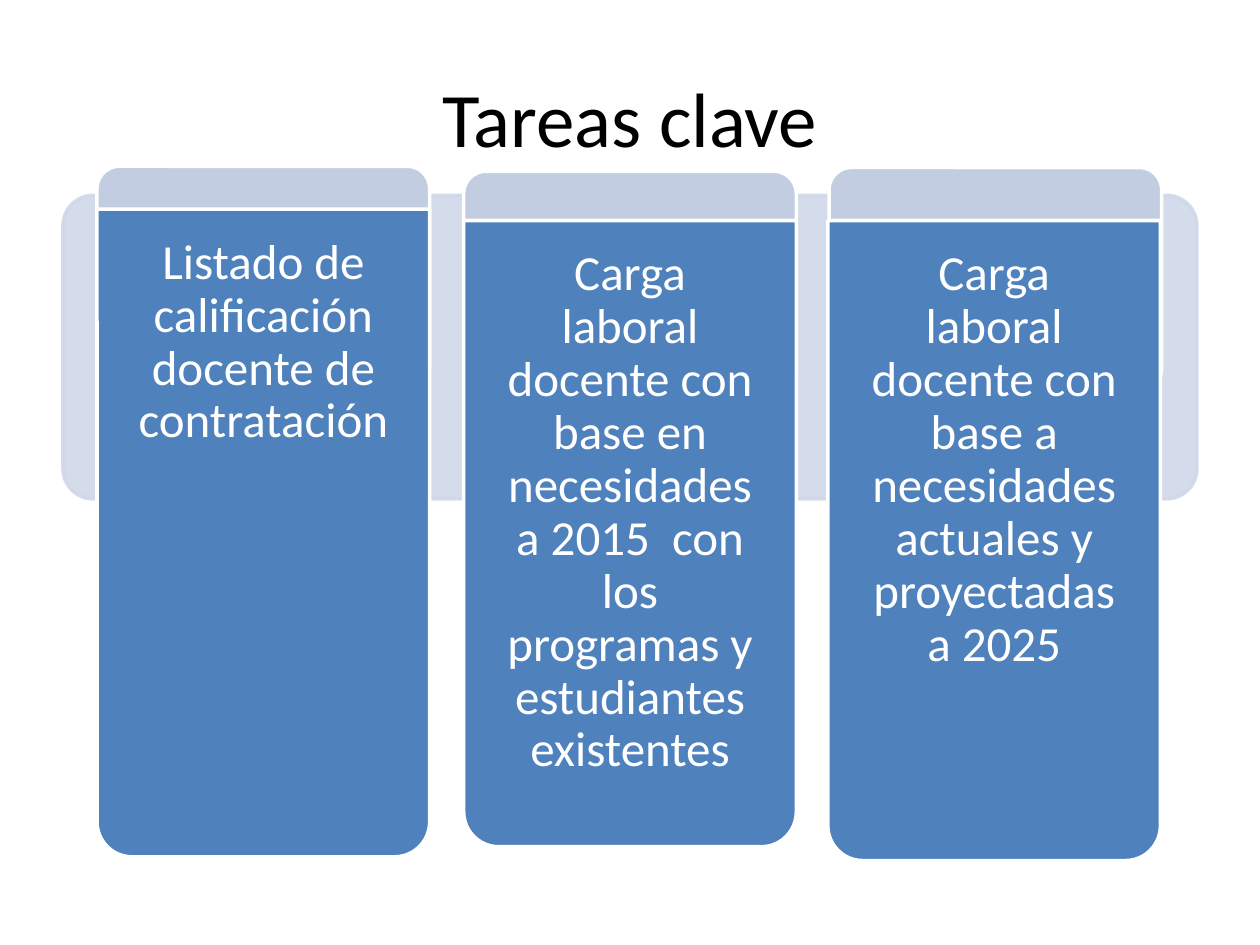
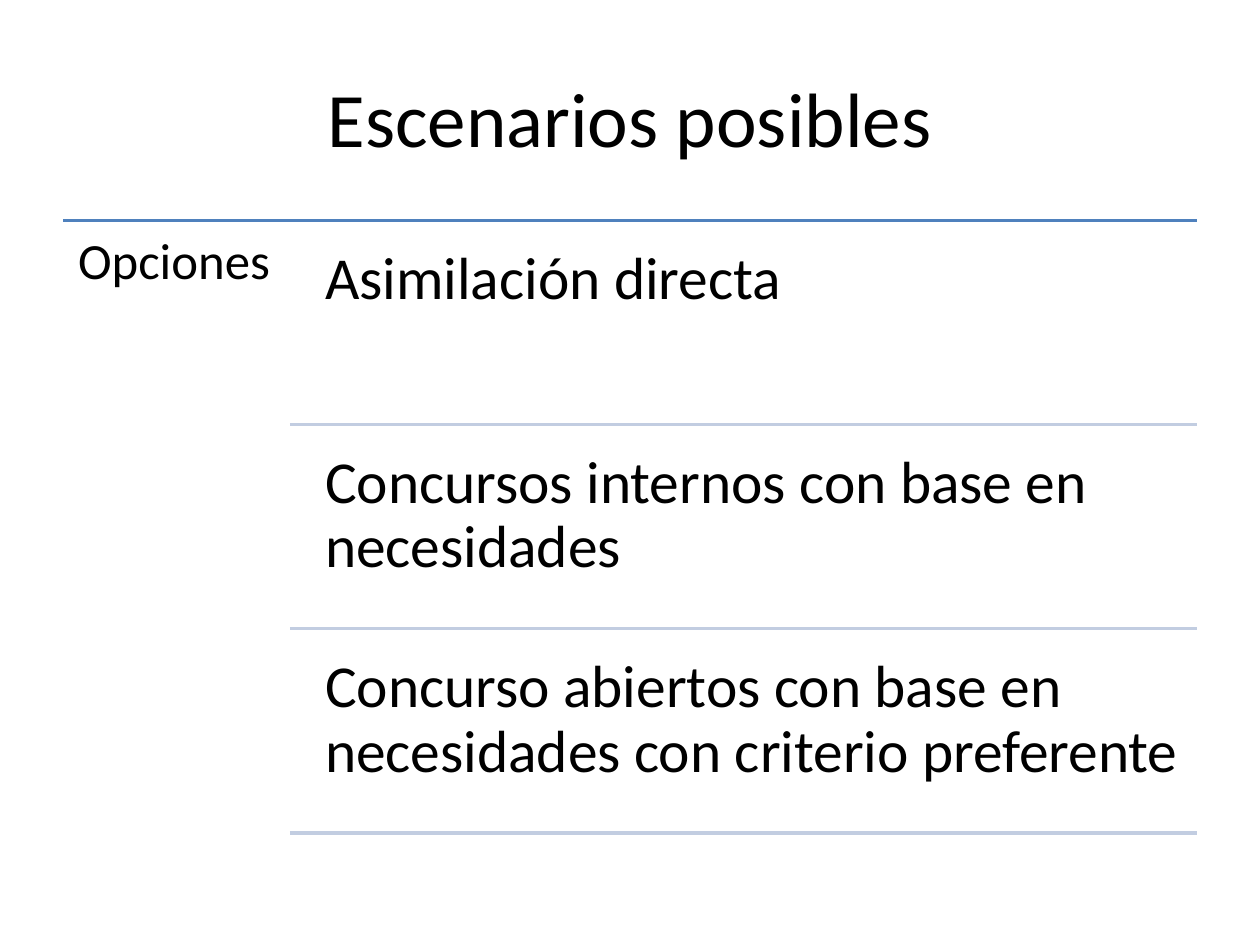
from typing import NamedTuple

from lxml import etree
from pptx import Presentation
from pptx.dml.color import RGBColor
from pptx.enum import shapes, text
from pptx.oxml.ns import qn
from pptx.util import Inches, Pt

FONT = "Calibri"
BLACK, WHITE = "000000", "FFFFFF"
BLUE, PALE_BLUE, BAND_BLUE = "4F81BD", "C2CDE1", "D0D8E8"
LINE_WIDTH = Pt(2)
LEFT, RIGHT = 0.5, 9.5
TITLE_ONLY = 5


class Box(NamedTuple):
    left: float
    top: float
    width: float
    height: float

    def lengths(self) -> list:
        return [Inches(value) for value in self]


class TaskCard(NamedTuple):
    left: float
    tab_left: float
    tab_top: float
    top: float
    height: float
    task: str


TASK_CARDS = [
    TaskCard(0.77, 0.77, 1.32, 1.66, 5.14,
             "Listado de calificación docente de contratación"),
    TaskCard(3.68, 3.68, 1.36, 1.75, 4.97,
             "Carga laboral docente con base en necesidades a 2015  con los "
             "programas y estudiantes existentes"),
    TaskCard(6.57, 6.58, 1.33, 1.75, 5.08,
             "Carga laboral docente con base a necesidades actuales y "
             "proyectadas a 2025"),
]
CARD_WIDTH, TAB_HEIGHT, CARD_INSET = 2.64, 1.77, 0.08

SCENARIOS = [
    "Asimilación directa",
    "Concursos internos con base en necesidades",
    "Concurso abiertos con base en necesidades con criterio preferente",
]
SCENARIO_TOP, SCENARIO_HEIGHT, SCENARIO_GAP = 1.75, 1.55, 0.08
SCENARIO_PITCH = 1.62
OPTIONS_WIDTH = 1.8


def rgb(color: str) -> RGBColor:
    return RGBColor.from_string(color)


def style_paragraph(paragraph, size: float, color: str, alignment) -> None:
    paragraph.alignment = alignment
    paragraph.font.name = FONT
    paragraph.font.size = Pt(size)
    paragraph.font.color.rgb = rgb(color)


def add_titled_slide(presentation, title: str):
    slide = presentation.slides.add_slide(presentation.slide_layouts[TITLE_ONLY])
    shape = slide.shapes.title
    shape.left, shape.top, shape.width, shape.height = Box(LEFT, 0.3, 9, 1.25).lengths()
    shape.text_frame.text = title
    shape.text_frame.vertical_anchor = text.MSO_ANCHOR.MIDDLE
    style_paragraph(shape.text_frame.paragraphs[0], 44, BLACK, text.PP_ALIGN.CENTER)
    return slide


def add_text(slide, box: Box, content: str, size: float, inset: float,
             color: str = BLACK, alignment=text.PP_ALIGN.LEFT) -> None:
    frame = slide.shapes.add_textbox(*box.lengths()).text_frame
    frame.word_wrap = True
    frame.margin_left = frame.margin_right = Inches(inset)
    frame.margin_top = frame.margin_bottom = Inches(inset)
    frame.text = content
    paragraph = frame.paragraphs[0]
    paragraph.line_spacing = 0.9
    style_paragraph(paragraph, size, color, alignment)


def add_panel(slide, preset, box: Box, corners: list[float], fill: str,
              line: str = WHITE):
    shape = slide.shapes.add_shape(preset, *box.lengths())
    shape.shadow.inherit = False
    for index, corner in enumerate(corners):
        shape.adjustments[index] = corner
    shape.fill.solid()
    shape.fill.fore_color.rgb = rgb(fill)
    shape.line.color.rgb = rgb(line)
    shape.line.width = LINE_WIDTH
    return shape


def set_opacity(shape, percent: int) -> None:
    """Apply one opacity to the fill and the outline."""
    for color in shape._element.spPr.iter(qn("a:srgbClr")):
        etree.SubElement(color, qn("a:alpha"), val=str(percent * 1000))


def add_rule(slide, left: float, top: float, color: str) -> None:
    rule = slide.shapes.add_connector(
        shapes.MSO_CONNECTOR.STRAIGHT,
        Inches(left), Inches(top), Inches(RIGHT), Inches(top))
    rule.line.color.rgb = rgb(color)
    rule.line.width = LINE_WIDTH
    etree.SubElement(rule._element.spPr, qn("a:effectLst"))


def add_task_card(slide, card: TaskCard) -> None:
    add_panel(slide, shapes.MSO_SHAPE.ROUNDED_RECTANGLE,
              Box(card.tab_left, card.tab_top, CARD_WIDTH, TAB_HEIGHT),
              [0.1], PALE_BLUE)
    body = add_panel(slide, shapes.MSO_SHAPE.ROUND_2_SAME_RECTANGLE,
                     Box(card.left, card.top, CARD_WIDTH, card.height),
                     [0.105, 0], BLUE)
    body.rotation = 180
    add_text(slide,
             Box(card.left + CARD_INSET, card.top,
                 CARD_WIDTH - 2 * CARD_INSET, card.height - CARD_INSET),
             card.task, 28, 0.22, WHITE, text.PP_ALIGN.CENTER)


def build_tasks(presentation) -> None:
    slide = add_titled_slide(presentation, "Tareas clave")
    band = add_panel(slide, shapes.MSO_SHAPE.ROUNDED_RECTANGLE,
                     Box(LEFT, 1.55, 9, 2.41), [0.1], BAND_BLUE, BAND_BLUE)
    set_opacity(band, 90)
    for card in TASK_CARDS:
        add_task_card(slide, card)


def build_scenarios(presentation) -> None:
    slide = add_titled_slide(presentation, "Escenarios posibles")
    add_rule(slide, LEFT, SCENARIO_TOP, BLUE)
    add_text(slide, Box(LEFT, SCENARIO_TOP, OPTIONS_WIDTH, 4.95), "Opciones", 29, 0.12)
    for index, scenario in enumerate(SCENARIOS):
        top = SCENARIO_TOP + SCENARIO_GAP + index * SCENARIO_PITCH
        add_text(slide, Box(2.44, top, 7.07, SCENARIO_HEIGHT), scenario, 34, 0.14)
        add_rule(slide, LEFT + OPTIONS_WIDTH,
                 SCENARIO_TOP + (index + 1) * SCENARIO_PITCH, PALE_BLUE)


def main() -> None:
    presentation = Presentation()
    presentation.slide_width = Inches(10)
    presentation.slide_height = Inches(7.5)
    build_tasks(presentation)
    build_scenarios(presentation)
    presentation.save("out.pptx")


if __name__ == "__main__":
    main()
